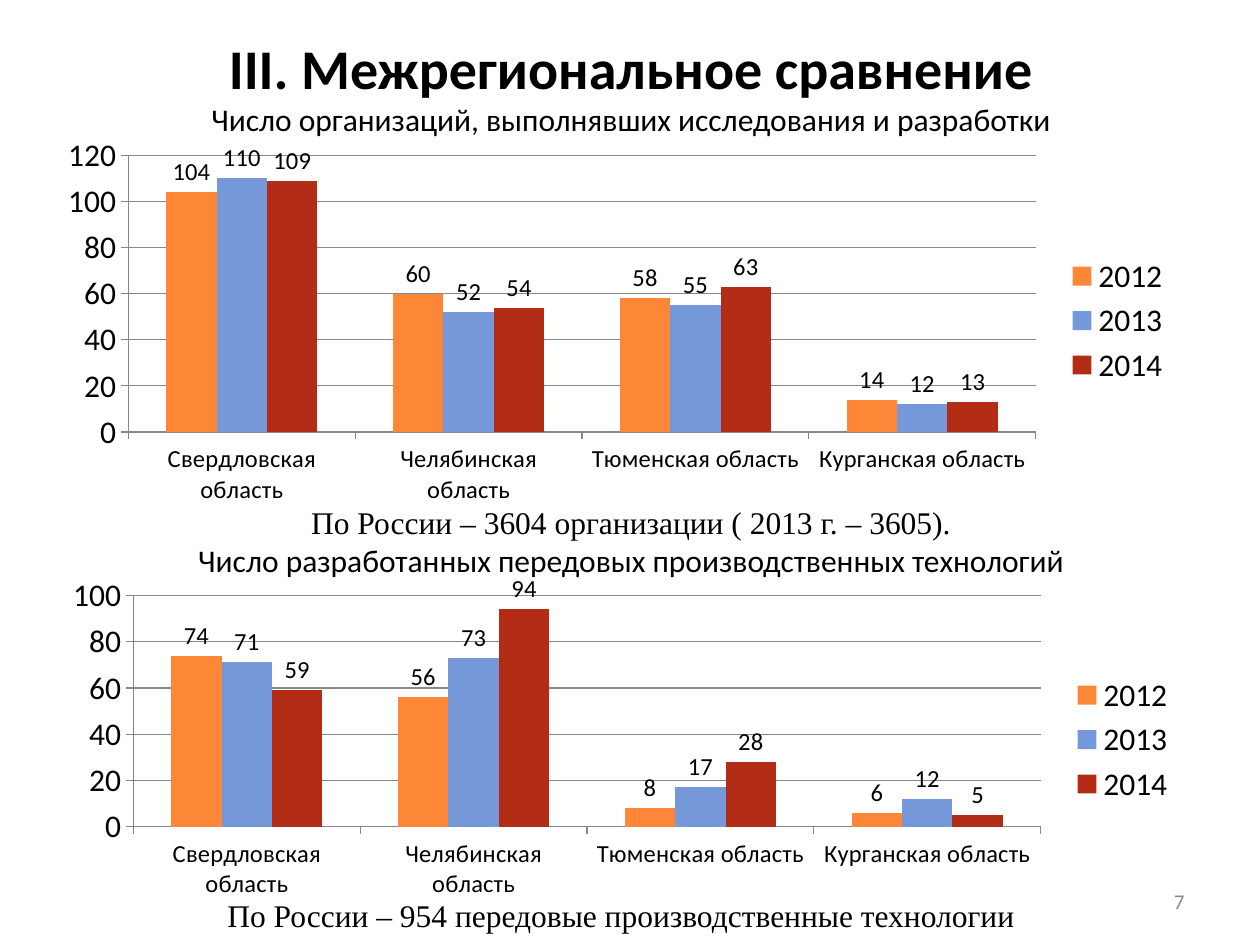
import dataclasses

import lxml.etree
import pptx
import pptx.chart.data
import pptx.dml.color
import pptx.enum.chart
import pptx.enum.text
import pptx.oxml
import pptx.oxml.ns
import pptx.util

Inches = pptx.util.Inches
Pt = pptx.util.Pt
RGB = pptx.dml.color.RGBColor.from_string


@dataclasses.dataclass(frozen=True)
class Theme:
    ink: str = "000000"
    grey: str = "898989"
    axis: str = "878787"
    bars: tuple = ("FE8637", "7598D9", "B32C16")
    sans: str = "Calibri"
    serif: str = "Times New Roman"
    head: int = 32
    body: int = 18
    label: int = 14
    small: int = 12


theme = Theme()
align = pptx.enum.text.PP_ALIGN


def style(font, size, name=theme.sans, color=theme.ink, bold=False):
    font.size = Pt(size)
    font.name = name
    font.bold = bold
    font.color.rgb = RGB(color)


def place(shape, box):
    """Set position, then wrap the text and centre it vertically."""
    shape.left, shape.top, shape.width, shape.height = map(Inches, box)
    frame = shape.text_frame
    frame.word_wrap = True
    frame.auto_size = pptx.enum.text.MSO_AUTO_SIZE.NONE
    frame.vertical_anchor = pptx.enum.text.MSO_ANCHOR.MIDDLE
    return frame


deck = pptx.Presentation()
deck.slide_width, deck.slide_height = Inches(10), Inches(7.5)
slide = deck.slides.add_slide(deck.slide_layouts[5])

# Title with its subtitle line
frame = place(slide.shapes.title, (0.51, 0.36, 9, 0.64))
frame.text = ("III. Межрегиональное сравнение\v"
              "Число организаций, выполнявших исследования и разработки")
title = frame.paragraphs[0]
title.alignment = align.CENTER
style(title.runs[0].font, theme.head, bold=True)
style(title.runs[1].font, theme.body)

# Charts: box, plot area as fractions of the box, values by year
regions = [f"{name} область" for name in
           ("Свердловская", "Челябинская", "Тюменская", "Курганская")]
years = ("2012", "2013", "2014")
charts = [
    ((0.39, 1.02, 9, 3.05), {"x": 0.07, "y": 0.07, "w": 0.8, "h": 0.72}, 120,
     [(104, 60, 58, 14), (110, 52, 55, 12), (109, 54, 63, 13)]),
    ((0.43, 4.54, 9, 2.66), {"x": 0.07, "y": 0.07, "w": 0.8, "h": 0.69}, 100,
     [(74, 56, 8, 6), (71, 73, 17, 12), (59, 94, 28, 5)]),
]
kinds = pptx.enum.chart
for box, area, top, rows in charts:
    data = pptx.chart.data.CategoryChartData()
    data.categories = regions
    for year, row in zip(years, rows):
        data.add_series(year, row)
    chart = slide.shapes.add_chart(
        kinds.XL_CHART_TYPE.COLUMN_CLUSTERED, *map(Inches, box), data).chart
    style(chart.font, theme.body)
    chart.has_title = False
    chart.has_legend = True
    chart.legend.position = kinds.XL_LEGEND_POSITION.RIGHT
    chart.legend.include_in_layout = False
    style(chart.legend.font, theme.body)

    plot = chart.plots[0]
    plot.gap_width = 150
    plot.overlap = 0
    plot.vary_by_categories = False
    for bar, color in zip(plot.series, theme.bars):
        bar.format.fill.solid()
        bar.format.fill.fore_color.rgb = RGB(color)
        bar.invert_if_negative = False
        labels = bar.data_labels
        labels.show_value = True
        labels.position = kinds.XL_LABEL_POSITION.OUTSIDE_END
        style(labels.font, theme.label)

    values, names = chart.value_axis, chart.category_axis
    values.minimum_scale, values.maximum_scale = 0, top
    values.major_unit = 20
    values.has_major_gridlines = True
    for axis, size in ((values, theme.body), (names, theme.label)):
        axis.major_tick_mark = kinds.XL_TICK_MARK.OUTSIDE
        axis.minor_tick_mark = kinds.XL_TICK_MARK.NONE
        style(axis.tick_labels.font, size)
    for line in (values.format.line, names.format.line,
                 values.major_gridlines.format.line):
        line.color.rgb = RGB(theme.axis)
        line.width = Pt(0.75)

    qn = pptx.oxml.ns.qn
    region = chart.element.find(".//" + qn("c:plotArea"))
    for old in region.findall(qn("c:layout")):
        region.remove(old)
    layout = lxml.etree.Element(qn("c:layout"))
    manual = lxml.etree.SubElement(layout, qn("c:manualLayout"))
    marks = {"layoutTarget": "inner", "xMode": "edge", "yMode": "edge", **area}
    for tag, value in marks.items():
        lxml.etree.SubElement(manual, qn("c:" + tag), val=str(value))
    region.insert(0, layout)

# Notes around the charts and the page number
notes = [
    ((7.17, 6.95, 2.33, 0.4), align.RIGHT,
     [("7", theme.small, theme.sans, theme.grey)]),
    ((0.51, 4.06, 9, 0.47), align.CENTER,
     [("По России – 3604 организации ( 2013 г. – 3605).",
       theme.body, theme.serif, theme.ink),
      ("Число разработанных передовых производственных технологий",
       theme.body, theme.sans, theme.ink)]),
    ((0.43, 7.03, 9, 0.47), align.CENTER,
     [("По России – 954 передовые производственные технологии",
       theme.body, theme.serif, theme.ink)]),
]
for box, side, lines in notes:
    frame = place(slide.shapes.add_textbox(0, 0, 0, 0), box)
    frame.text = "\n".join(line[0] for line in lines)
    for para, (_, size, name, color) in zip(frame.paragraphs, lines):
        para.alignment = side
        style(para.runs[0].font, size, name, color)

deck.save("out.pptx")
